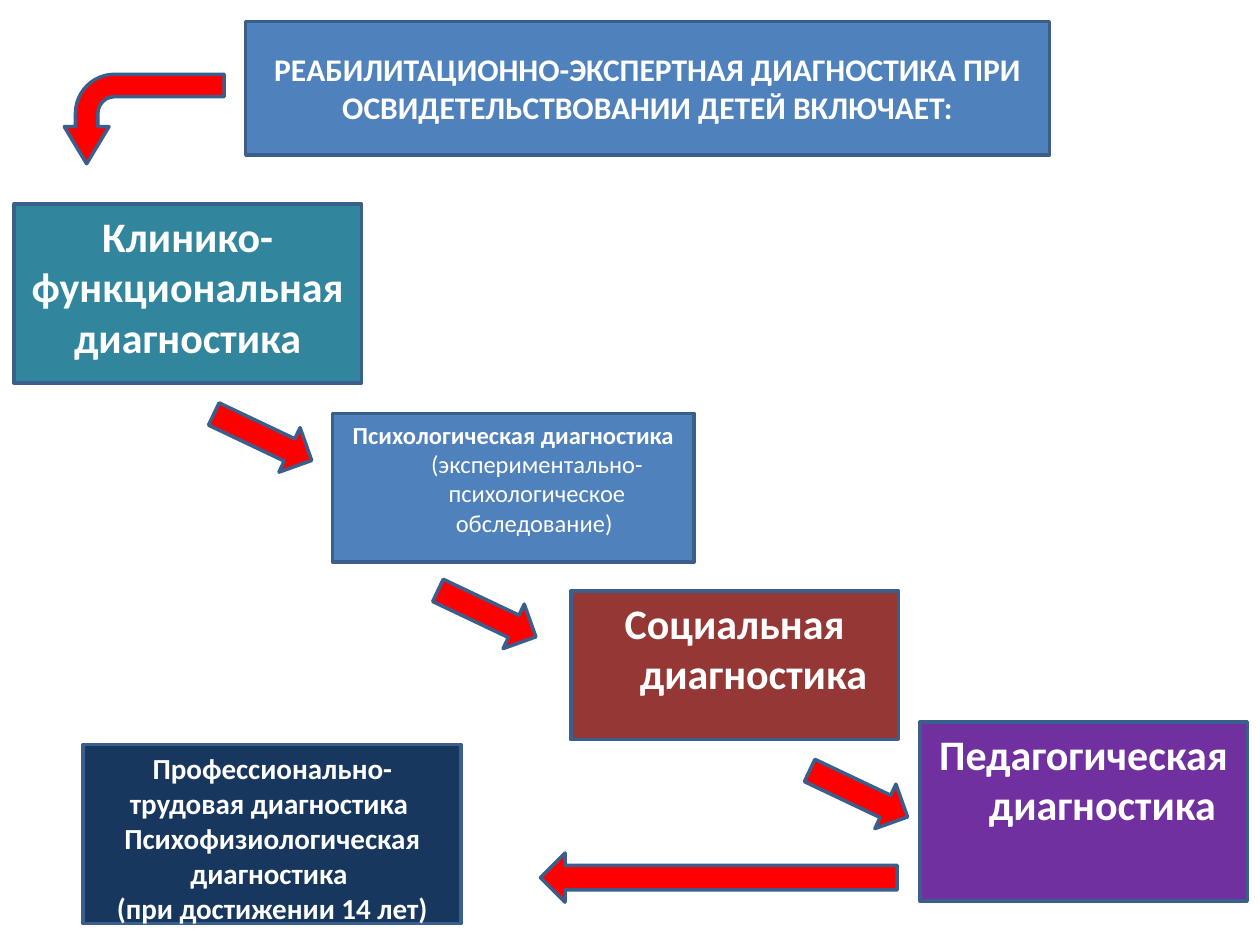
from dataclasses import dataclass

import pptx
import pptx.dml.color
import pptx.enum.shapes
import pptx.enum.text
import pptx.util

Pt = pptx.util.Pt
SHAPE = pptx.enum.shapes.MSO_SHAPE
ANCHOR = pptx.enum.text.MSO_ANCHOR
COLORS = {
    "blue": "4F81BD",
    "teal": "31859C",
    "purple": "7030A0",
    "brick": "953735",
    "navy": "17375E",
    "red": "FF0000",
    "outline": "3A5F8C",
    "text": "FFFFFF",
}
HANGING = 27  # hanging indent, points


@dataclass
class Box:
    left: float
    top: float
    width: float
    height: float
    fill: str
    size: float
    paragraphs: list[list[tuple[str, bool]]]  # runs as (text, bold)
    hanging: bool = False
    anchor: ANCHOR = ANCHOR.TOP


@dataclass
class Arrow:
    left: float
    top: float
    width: float
    height: float
    rotation: float
    kind: SHAPE = SHAPE.UP_ARROW
    adjustments: tuple[float, ...] = ()
    flipped: bool = False


BOXES = [
    Box(140.4, 12.2, 459.4, 76.3, "blue", 18,
        [[("РЕАБИЛИТАЦИОННО-ЭКСПЕРТНАЯ ДИАГНОСТИКА ПРИ "
           "ОСВИДЕТЕЛЬСТВОВАНИИ ДЕТЕЙ ВКЛЮЧАЕТ:", True)]], anchor=ANCHOR.MIDDLE),
    Box(190.1, 236.2, 206.6, 85, "blue", 14,
        [[("Психологическая диагностика", True),
          (" (экспериментально-психологическое обследование) ", False)]], hanging=True),
    Box(7.9, 116.6, 198.7, 102.2, "teal", 24,
        [[("Клинико-функциональная диагностика", True)]]),
    Box(525.6, 412.6, 187.2, 102.2, "purple", 24,
        [[("Педагогическая диагностика ", True)]], hanging=True),
    Box(326.2, 337.7, 187.2, 85, "brick", 24,
        [[("Социальная диагностика ", True)]], hanging=True),
    Box(47.5, 425.5, 216, 102.2, "navy", 16.6,
        [[("Профессионально-трудовая диагностика ", True)],
         [("Психофизиологическая диагностика ", True)],
         [("(при достижении 14 лет)", True)]]),
]

# Bent arrow from the title, three steps down, then the long arrow to the left
STEPS = [(136.1, 218.9), (264.2, 319.7), (476.6, 422.6)]
ARROWS = [
    Arrow(56.9, 22.3, 51.1, 91.4, 270, SHAPE.BENT_ARROW, (0.25, 0.25, 0.415, 0.438), True),
    *[Arrow(left, top, 28.1, 61.9, 115.4) for left, top in STEPS],
    Arrow(396.7, 399.6, 28.1, 203.8, 270),
]


def rgb(name: str) -> pptx.dml.color.RGBColor:
    return pptx.dml.color.RGBColor.from_string(COLORS[name])


def add_filled(slide, kind: SHAPE, item: Box | Arrow, fill: str):
    sp = slide.shapes.add_shape(
        kind, Pt(item.left), Pt(item.top), Pt(item.width), Pt(item.height))
    sp.shadow.inherit = False
    sp.fill.solid()
    sp.fill.fore_color.rgb = rgb(fill)
    sp.line.color.rgb = rgb("outline")
    sp.line.width = Pt(2)
    return sp


def add_box(slide, box: Box) -> None:
    tf = add_filled(slide, SHAPE.RECTANGLE, box, box.fill).text_frame
    for name, value in {"word_wrap": True, "vertical_anchor": box.anchor}.items():
        setattr(tf, name, value)
    for i, runs in enumerate(box.paragraphs):
        p = tf.add_paragraph() if i else tf.paragraphs[0]
        p.alignment = pptx.enum.text.PP_ALIGN.CENTER
        if box.hanging:
            pPr = p._p.get_or_add_pPr()
            pPr.set("marL", str(Pt(HANGING)))
            pPr.set("indent", str(-Pt(HANGING)))
        for text, bold in runs:
            r = p.add_run()
            r.text = text
            font = {"name": "Calibri", "size": Pt(box.size), "bold": bold}
            for name, value in font.items():
                setattr(r.font, name, value)
            r.font.color.rgb = rgb("text")


def add_arrow(slide, arrow: Arrow) -> None:
    sp = add_filled(slide, arrow.kind, arrow, "red")
    sp.rotation = arrow.rotation
    for i, value in enumerate(arrow.adjustments):
        sp.adjustments[i] = value
    if arrow.flipped:
        sp._element.spPr.xfrm.set("flipH", "1")


def main() -> None:
    prs = pptx.Presentation()
    prs.slide_width, prs.slide_height = Pt(720), Pt(540)
    s = prs.slides.add_slide(prs.slide_layouts[6])
    # Title and diagnostics boxes
    for box in BOXES:
        add_box(s, box)
    # Arrows between the stages
    for arrow in ARROWS:
        add_arrow(s, arrow)
    prs.save("out.pptx")


if __name__ == "__main__":
    main()
